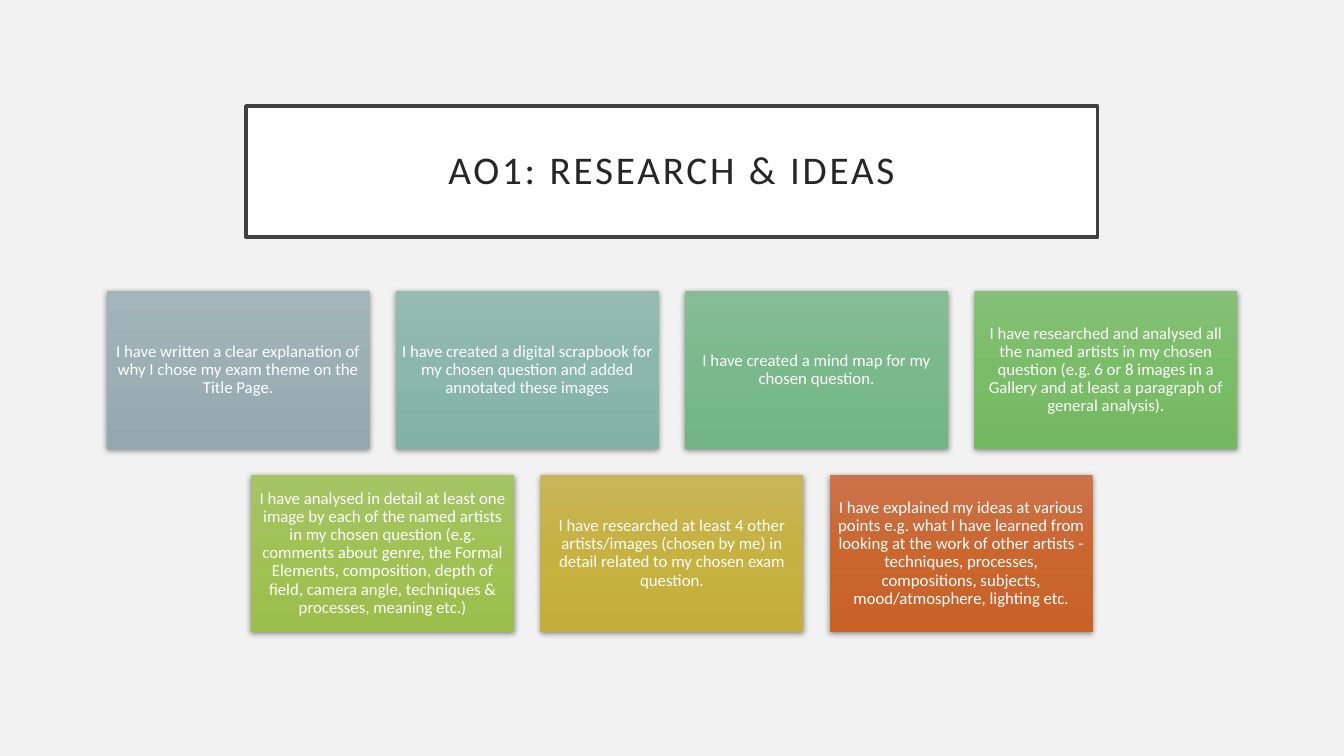
from pptx import Presentation
from pptx.dml.color import RGBColor
from pptx.enum.shapes import MSO_SHAPE
from pptx.enum.text import MSO_ANCHOR, MSO_AUTO_SIZE, PP_ALIGN
from pptx.oxml import parse_xml
from pptx.oxml.ns import nsdecls, qn
from pptx.util import Cm, Pt
from copy import deepcopy

FONT = "Calibri"
WHITE = RGBColor(0xFF, 0xFF, 0xFF)
BACKGROUND = RGBColor(0xF2, 0xF2, 0xF2)
TITLE_BORDER = RGBColor(0x40, 0x40, 0x40)
TITLE_TEXT = RGBColor(0x26, 0x26, 0x26)

# Gradient colours of each card, from top to bottom
SLATE = [RGBColor(0xA3, 0xB5, 0xBB), RGBColor(0x9B, 0xAF, 0xB5), RGBColor(0x93, 0xA9, 0xAF)]
TEAL = [RGBColor(0x95, 0xBB, 0xB2), RGBColor(0x8B, 0xB7, 0xAC), RGBColor(0x83, 0xB1, 0xA6)]
SEA_GREEN = [RGBColor(0x86, 0xBD, 0x95), RGBColor(0x7A, 0xB9, 0x8B), RGBColor(0x72, 0xB5, 0x84)]
GREEN = [RGBColor(0x85, 0xC0, 0x76), RGBColor(0x7A, 0xBD, 0x68), RGBColor(0x73, 0xB9, 0x60)]
LIME = [RGBColor(0xA5, 0xC4, 0x66), RGBColor(0xA0, 0xC2, 0x55), RGBColor(0x9B, 0xBE, 0x4D)]
GOLD = [RGBColor(0xC9, 0xB5, 0x57), RGBColor(0xC7, 0xB1, 0x41), RGBColor(0xC4, 0xAD, 0x39)]
ORANGE = [RGBColor(0xCC, 0x73, 0x4B), RGBColor(0xCB, 0x66, 0x2F), RGBColor(0xC8, 0x61, 0x28)]

# Card grid, in centimetres
SLIDE_WIDTH, SLIDE_HEIGHT = 33.87, 19.05
CARD_WIDTH, CARD_HEIGHT = 6.63, 3.97
COLUMN_STEP, ROW_STEP = 7.29, 4.62
FIRST_ROW_TOP = 7.34

CARD_ROWS = [
    [
        ("I have written a clear explanation of why I chose my exam theme on the Title Page.", SLATE),
        ("I have created a digital scrapbook for my chosen question and added "
         "annotated these images", TEAL),
        ("I have created a mind map for my chosen question.", SEA_GREEN),
        ("I have researched and analysed all the named artists in my chosen question "
         "(e.g. 6 or 8 images in a Gallery and at least a paragraph of general analysis).", GREEN),
    ],
    [
        ("I have analysed in detail at least one image by each of the named artists in my "
         "chosen question (e.g. comments about genre, the Formal Elements, composition, "
         "depth of field, camera angle, techniques & processes, meaning etc.)", LIME),
        ("I have researched at least 4 other artists/images (chosen by me) in detail "
         "related to my chosen exam question.", GOLD),
        ("I have explained my ideas at various points e.g. what I have learned from looking "
         "at the work of other artists - techniques, processes, compositions, subjects, "
         "mood/atmosphere, lighting etc.", ORANGE),
    ],
]


def write_text(shape, text, size, color, inset):
    """Fill a shape with one centred paragraph and return its run."""
    frame = shape.text_frame
    frame.text = text
    frame.word_wrap = True
    frame.auto_size = MSO_AUTO_SIZE.NONE
    frame.vertical_anchor = MSO_ANCHOR.MIDDLE
    frame.margin_left = frame.margin_right = inset
    frame.margin_top = frame.margin_bottom = inset
    paragraph = frame.paragraphs[0]
    paragraph.alignment = PP_ALIGN.CENTER
    paragraph.line_spacing = 0.9
    run = paragraph.runs[0]
    run.font.name = FONT
    run.font.size = Pt(size)
    run.font.color.rgb = color
    return run


def fill_gradient(shape, colors):
    """Apply an evenly spaced gradient running from top to bottom."""
    fill = shape.fill
    fill.gradient()
    fill.gradient_angle = 270
    stop_list = next(shape.element.spPr.iter(qn("a:gsLst")))
    while len(stop_list) < len(colors):
        stop_list.append(deepcopy(stop_list[0]))
    for index, (stop, color) in enumerate(zip(fill.gradient_stops, colors)):
        stop.position = index / (len(colors) - 1)
        stop.color.rgb = color


def add_soft_shadow(shape):
    """Put a faint shadow just below a shape."""
    shape.shadow.inherit = False
    effects = shape.element.spPr.find(qn("a:effectLst"))
    effects.append(parse_xml(
        f'<a:outerShdw {nsdecls("a")} blurRad="{Pt(4.4)}" dist="{Pt(1.2)}" '
        'dir="5400000" algn="ctr" rotWithShape="0"><a:srgbClr val="000000">'
        '<a:alpha val="45000"/></a:srgbClr></a:outerShdw>'))


def format_title(title):
    title.left, title.top = Cm(6.2), Cm(2.67)
    title.width, title.height = Cm(21.46), Cm(3.3)
    title.fill.solid()
    title.fill.fore_color.rgb = WHITE
    title.line.color.rgb = TITLE_BORDER
    title.line.width = Pt(2.5)
    run = write_text(title, "AO1: RESEARCH & IDEAS", 28, TITLE_TEXT, Cm(0.51))
    run.font._element.set("spc", "200")


def add_card(slide, left, top, text, colors):
    card = slide.shapes.add_shape(
        MSO_SHAPE.RECTANGLE, Cm(left), Cm(top), Cm(CARD_WIDTH), Cm(CARD_HEIGHT))
    fill_gradient(card, colors)
    card.line.fill.background()
    add_soft_shadow(card)
    write_text(card, text, 12, WHITE, Cm(0.13))


def add_card_row(slide, top, cards):
    """Add a row of cards centred on the slide."""
    row_width = (len(cards) - 1) * COLUMN_STEP + CARD_WIDTH
    first_left = (SLIDE_WIDTH - row_width) / 2
    for column, (text, colors) in enumerate(cards):
        add_card(slide, first_left + column * COLUMN_STEP, top, text, colors)


def main():
    presentation = Presentation()
    presentation.slide_width = Cm(SLIDE_WIDTH)
    presentation.slide_height = Cm(SLIDE_HEIGHT)
    title_only = presentation.slide_layouts.get_by_name("Title Only")
    slide = presentation.slides.add_slide(title_only)

    # Background and title
    slide.background.fill.solid()
    slide.background.fill.fore_color.rgb = BACKGROUND
    format_title(slide.shapes.title)

    # Checklist cards
    for row, cards in enumerate(CARD_ROWS):
        add_card_row(slide, FIRST_ROW_TOP + row * ROW_STEP, cards)

    presentation.save("out.pptx")


if __name__ == "__main__":
    main()
